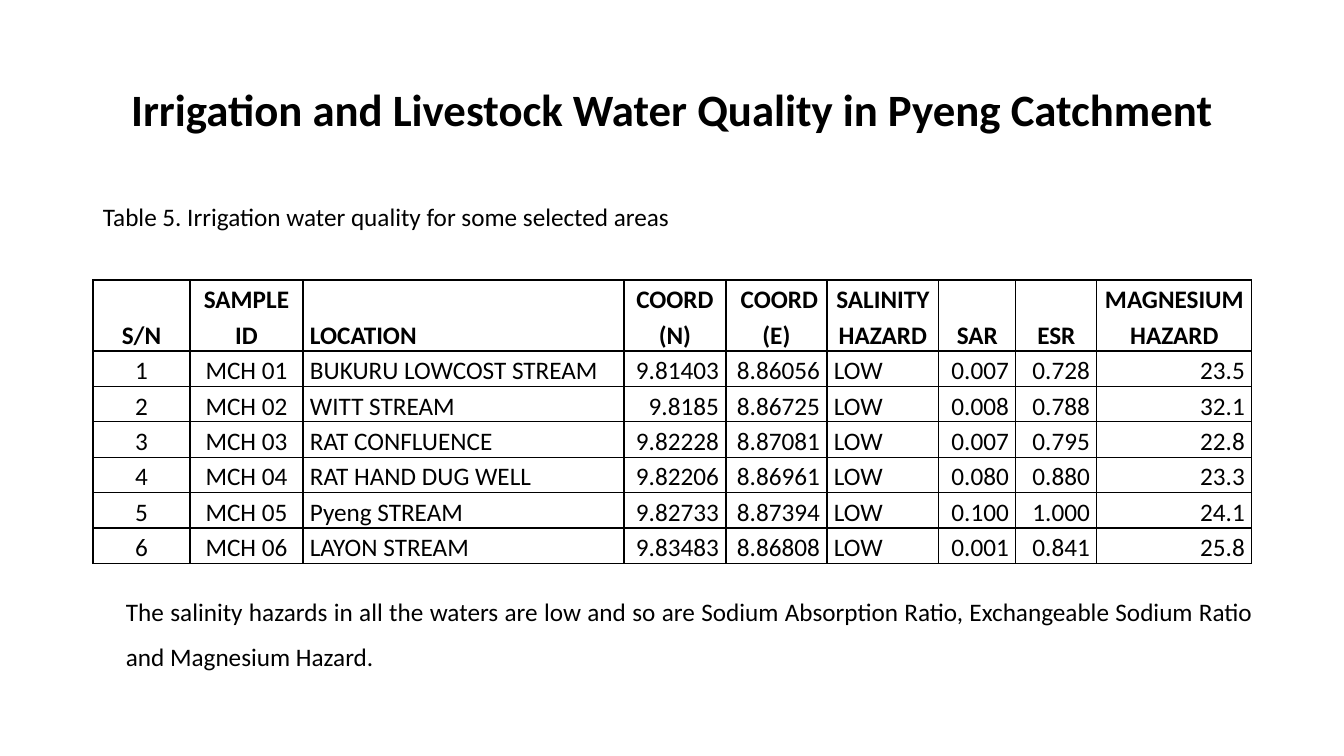
"""Build the slide on irrigation and livestock water quality in Pyeng Catchment."""
from lxml.etree import SubElement
from pptx import Presentation
from pptx.dml.color import RGBColor
from pptx.enum.text import MSO_ANCHOR, MSO_AUTO_SIZE, PP_ALIGN
from pptx.oxml.ns import qn
from pptx.util import Emu, Pt

BLACK = RGBColor(0x00, 0x00, 0x00)
LEFT, CENTER, RIGHT, JUSTIFY = PP_ALIGN.LEFT, PP_ALIGN.CENTER, PP_ALIGN.RIGHT, PP_ALIGN.JUSTIFY
BORDER_WIDTH = Pt(1)


def px(length):
    return Emu(round(length * 914400 / 100.8))


def write(frame, text, size=18, bold=False, align=LEFT, line_spacing=1.0, space_after=0):
    paragraph = frame.paragraphs[0]
    paragraph.alignment = align
    paragraph.line_spacing = line_spacing
    paragraph.space_before = Pt(0)
    paragraph.space_after = Pt(space_after)
    run = paragraph.add_run()
    run.text = text
    run.font.name = "Calibri"
    run.font.size = Pt(size)
    run.font.bold = bold
    run.font.color.rgb = BLACK


presentation = Presentation()
presentation.slide_width, presentation.slide_height = px(1344), px(756)
slide = presentation.slides.add_slide(presentation.slide_layouts[5])

title = slide.shapes.title
title.left, title.top, title.width, title.height = px(93), px(39), px(1159), px(146)
title.text_frame.vertical_anchor = MSO_ANCHOR.MIDDLE
write(title.text_frame, "Irrigation and Livestock Water Quality in Pyeng Catchment",
      size=32, bold=True, align=CENTER, line_spacing=0.9)

headings = ["S/N", "SAMPLE ID", "LOCATION", "COORD (N)", " COORD (E)",
            "SALINITY HAZARD", "SAR", "ESR", "MAGNESIUM HAZARD"]
samples = [
    ("BUKURU LOWCOST STREAM", "9.81403", "8.86056", "LOW", "0.007", "0.728", "23.5"),
    ("WITT STREAM", "9.8185", "8.86725", "LOW", "0.008", "0.788", "32.1"),
    ("RAT CONFLUENCE", "9.82228", "8.87081", "LOW", "0.007", "0.795", "22.8"),
    ("RAT HAND DUG WELL", "9.82206", "8.86961", "LOW", "0.080", "0.880", "23.3"),
    ("Pyeng STREAM", "9.82733", "8.87394", "LOW", "0.100", "1.000", "24.1"),
    ("LAYON STREAM", "9.83483", "8.86808", "LOW", "0.001", "0.841", "25.8"),
]
column_widths = [97, 113, 321, 102, 101, 112, 77, 81, 155]
column_aligns = [CENTER, CENTER, LEFT, RIGHT, RIGHT, LEFT, RIGHT, RIGHT, RIGHT]
row_heights = [38, 71] + [35] * len(samples)
rows = [[""] * len(headings), headings]
rows += [(str(number), f"MCH {number:02}", *sample) for number, sample in enumerate(samples, 1)]

quality = slide.shapes.add_table(len(rows), len(headings), px(93), px(242),
                                 px(sum(column_widths)), px(sum(row_heights))).table
quality.first_row = quality.horz_banding = False
for column, width in zip(quality.columns, column_widths):
    column.width = px(width)

for row_index, (values, height) in enumerate(zip(rows, row_heights)):
    quality.rows[row_index].height = px(height)
    for column_index, value in enumerate(values):
        cell = quality.cell(row_index, column_index)
        cell.vertical_anchor = MSO_ANCHOR.BOTTOM
        cell.margin_left = cell.margin_right = px(7)
        cell.margin_top = cell.margin_bottom = 0
        properties = cell._tc.get_or_add_tcPr()
        for side in ("lnL", "lnR", "lnT", "lnB"):
            border = SubElement(properties, qn(f"a:{side}"), w=str(BORDER_WIDTH))
            if row_index == 0 and side != "lnB":
                SubElement(border, qn("a:noFill"))
            else:
                SubElement(SubElement(border, qn("a:solidFill")), qn("a:srgbClr"), val=str(BLACK))
        cell.fill.background()
        if value:
            heading = row_index == 1
            align = CENTER if heading and value != "LOCATION" else column_aligns[column_index]
            write(cell.text_frame, value, bold=heading, align=align, line_spacing=1.15)
quality.cell(0, 0).merge(quality.cell(0, 4))

caption = slide.shapes.add_textbox(px(93), px(196), px(605), px(40)).text_frame
caption.word_wrap = False
caption.auto_size = MSO_AUTO_SIZE.SHAPE_TO_FIT_TEXT
write(caption, "Table 5. Irrigation water quality for some selected areas", space_after=10)

finding = slide.shapes.add_textbox(px(116), px(576), px(1147), px(102)).text_frame
finding.word_wrap = True
finding.auto_size = MSO_AUTO_SIZE.SHAPE_TO_FIT_TEXT
write(finding, "The salinity hazards in all the waters are low and so are Sodium Absorption Ratio, "
      "Exchangeable Sodium Ratio and Magnesium Hazard.",
      align=JUSTIFY, line_spacing=1.5, space_after=10)

presentation.save("out.pptx")
